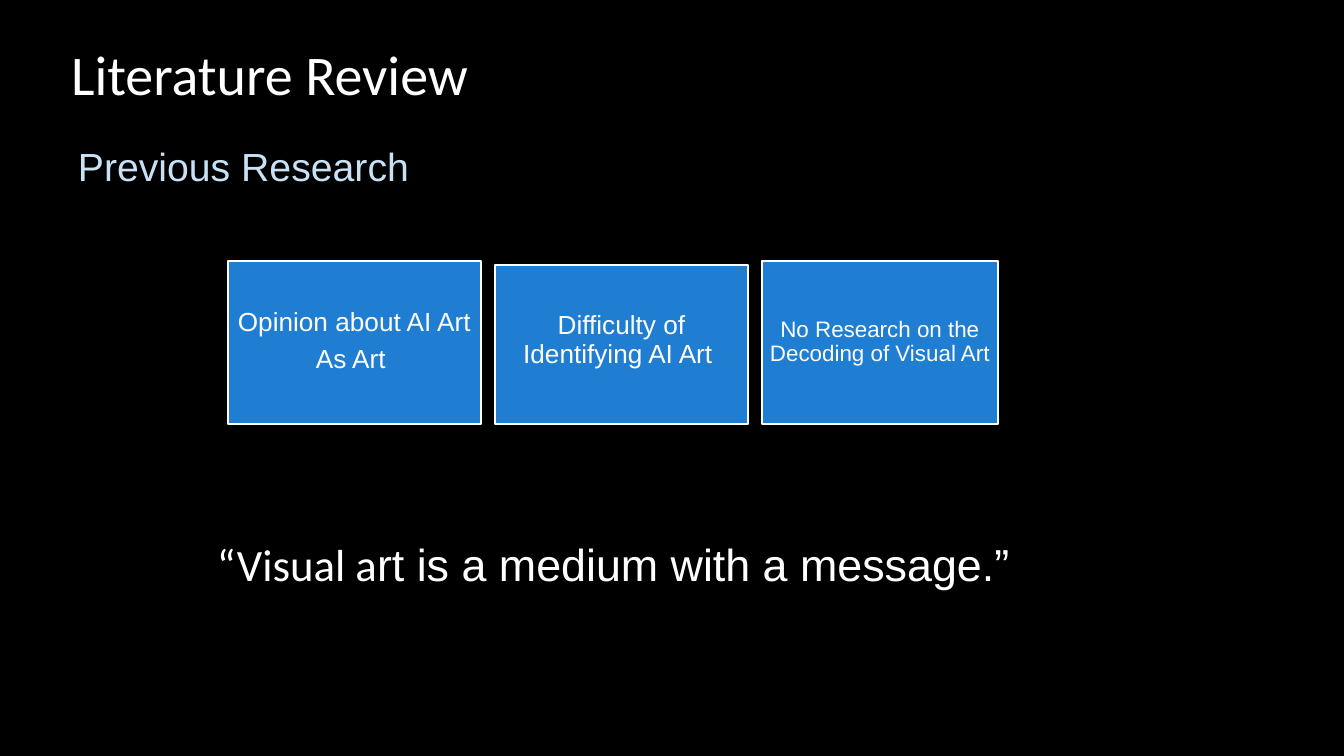
from pptx import Presentation
from pptx.dml.color import RGBColor
from pptx.enum.shapes import MSO_SHAPE as SHAPE
from pptx.enum.text import MSO_ANCHOR as ANCHOR, PP_ALIGN as ALIGN
from pptx.util import Pt

PX = 6804
COLORS = {"black": "000000", "white": "FFFFFF", "blue": "1F7ED2", "pale": "C8E1F4"}

TEXTS = [
    ((62, 35, 672, 78), 30, "white", [("Literature Review", "Calibri")]),
    ((69, 137, 400, 55), 21, "pale", [("Previous Research", "Arial")]),
    ((208, 532, 968, 65), 24, "white",
     [("“Visual a", "Calibri"), ("rt is a medium with a message.”", "Arial")]),
]
CARDS = [
    (253, 163, 14, 8, ["Opinion about AI Art", "As Art "]),
    (253, 159, 14, 14, ["Difficulty of Identifying AI Art "]),
    (236, 163, 12, 6, ["No Research on the Decoding of Visual Art"]),
]
CARD_LEFT, CARD_BOTTOM, CARD_GAP, CARD_INSET = 228, 424, 14, 6


def color(name):
    return RGBColor.from_string(COLORS[name])


def emu(*lengths):
    return [n * PX for n in lengths]


def set_insets(tf, left, top, right, bottom):
    tf.margin_left, tf.margin_top, tf.margin_right, tf.margin_bottom = emu(
        left, top, right, bottom)
    tf.word_wrap = True


def add_run(p, text, font, size, tint):
    r = p.add_run()
    r.text = text
    r.font.name = font
    r.font.size = Pt(size)
    r.font.color.rgb = color(tint)


def add_text(s, box, size, tint, runs):
    tf = s.shapes.add_textbox(*emu(*box)).text_frame
    set_insets(tf, 9, 5, 9, 5)
    for text, font in runs:
        add_run(tf.paragraphs[0], text, font, size, tint)


def add_card(s, left, width, height, size, bottom_inset, lines):
    sp = s.shapes.add_shape(
        SHAPE.RECTANGLE, *emu(left, CARD_BOTTOM - height, width, height))
    sp.shadow.inherit = False
    sp.fill.solid()
    sp.fill.fore_color.rgb = color("blue")
    sp.line.color.rgb = color("white")
    sp.line.width = Pt(1)
    tf = sp.text_frame
    set_insets(tf, CARD_INSET, CARD_INSET, CARD_INSET, bottom_inset)
    tf.vertical_anchor = ANCHOR.MIDDLE
    for i, line in enumerate(lines):
        p = tf.add_paragraph() if i else tf.paragraphs[0]
        p.alignment = ALIGN.CENTER
        p.line_spacing = 0.9
        p.space_before = Pt(5 if i else 0)
        add_run(p, line, "Arial", size, "white")


def main():
    prs = Presentation()
    prs.slide_width, prs.slide_height = emu(1344, 756)
    s = prs.slides.add_slide(prs.slide_layouts[6])
    s.background.fill.solid()
    s.background.fill.fore_color.rgb = color("black")
    for text in TEXTS:
        add_text(s, *text)
    left = CARD_LEFT
    for card in CARDS:
        add_card(s, left, *card)
        left += card[0] + CARD_GAP
    prs.save("out.pptx")


if __name__ == "__main__":
    main()
